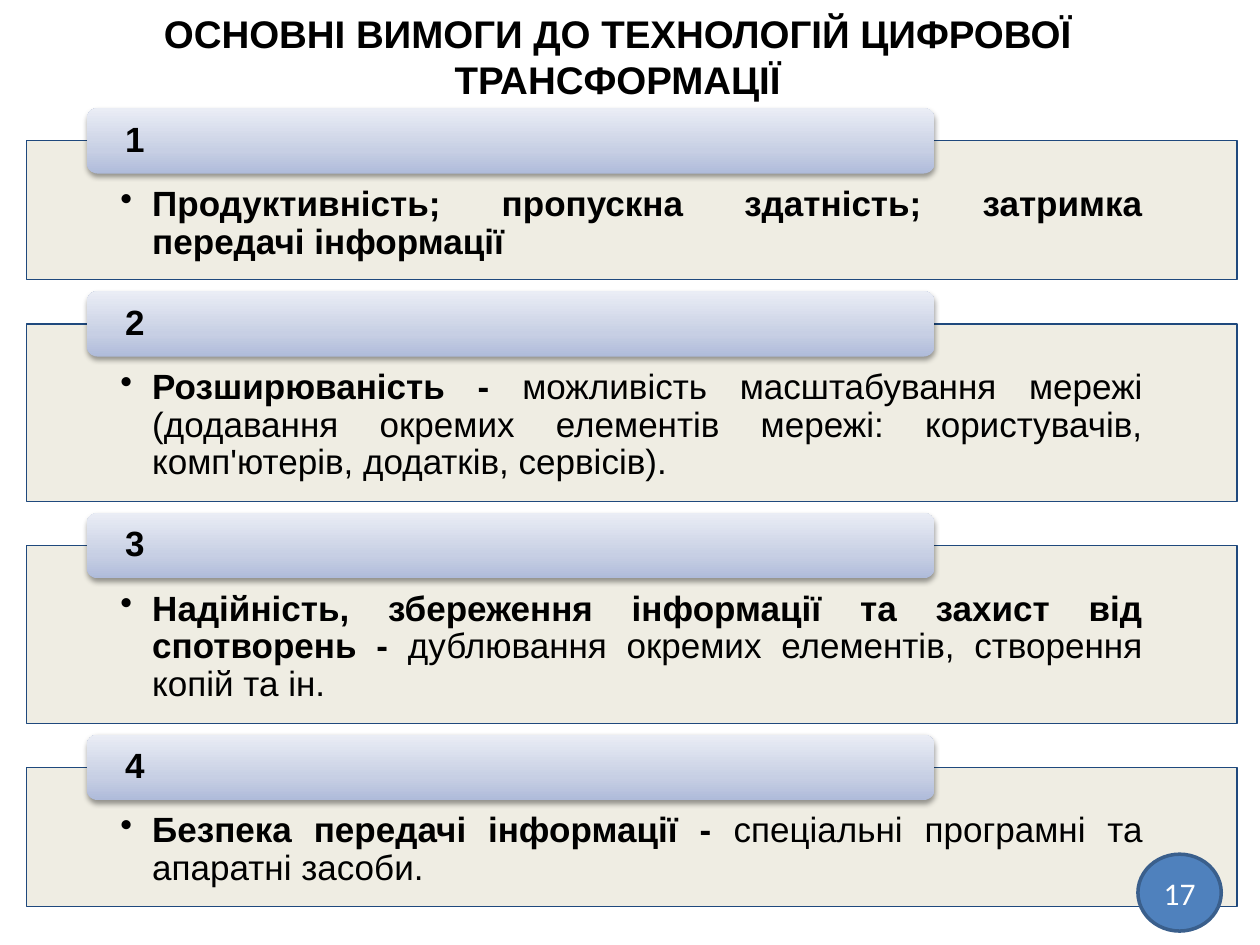
from copy import deepcopy

from lxml.etree import SubElement
from pptx import Presentation
from pptx.dml.color import RGBColor
from pptx.enum.shapes import MSO_SHAPE as Shape
from pptx.enum.text import MSO_ANCHOR as Anchor, PP_ALIGN as Align
from pptx.oxml.ns import qn
from pptx.util import Cm, Pt

COLORS = {
    "text": "000000", "panel": "EEECE1", "border": "1F497D",
    "tab_dark": "AFBBDA", "tab_mid": "C7CFE4", "tab_light": "EAEDF5",
    "badge": "4F81BD", "badge_edge": "3A5F8C", "badge_text": "FFFFFF",
}
TITLE = "ОСНОВНІ ВИМОГИ ДО ТЕХНОЛОГІЙ ЦИФРОВОЇ ТРАНСФОРМАЦІЇ"
REQUIREMENTS = [
    ("Продуктивність; пропускна здатність; затримка передачі інформації", "", 2.8),
    ("Розширюваність - ", "можливість масштабування мережі (додавання окремих "
     "елементів мережі: користувачів, комп'ютерів, додатків, сервісів).", 3.58),
    ("Надійність, збереження інформації та захист від спотворень -",
     " дублювання окремих елементів, створення копій та ін.", 3.58),
    ("Безпека передачі інформації - ", "спеціальні програмні та апаратні засоби.", 2.8),
]
FIRST_TOP, GAP, TAB_RISE = 2.84, 0.89, 0.66


def color(name):
    """Return the named colour."""
    return RGBColor.from_string(COLORS[name])


def add_shape(page, kind, left, top, width, height):
    """Add a preset shape without a shadow, measured in centimetres."""
    shape = page.shapes.add_shape(kind, Cm(left), Cm(top), Cm(width), Cm(height))
    shape.shadow.inherit = False
    return shape


def set_frame(frame, anchor, left, top, right, bottom):
    """Set wrapping, anchor and insets of a text frame."""
    frame.word_wrap = True
    frame.vertical_anchor = anchor
    frame.margin_left, frame.margin_top = Cm(left), Cm(top)
    frame.margin_right, frame.margin_bottom = Cm(right), Cm(bottom)


def style(para, size, align, name="Arial", ink="text", bold=None):
    """Set the font and alignment of a paragraph."""
    para.alignment = align
    para.font.size, para.font.name, para.font.bold = Pt(size), name, bold
    para.font.color.rgb = color(ink)


def add_bullet(para):
    """Give a paragraph a hanging bullet."""
    props = para._p.get_or_add_pPr()
    props.set("marL", str(Cm(0.64)))
    props.set("indent", str(Cm(-0.64)))
    bullet = props.makeelement(qn("a:buChar"), {"char": "•"})
    props.insert_element_before(bullet, "a:tabLst", "a:defRPr", "a:extLst")


def add_shadow(shape):
    """Put a soft shadow below a shape."""
    effects = shape._element.spPr.find(qn("a:effectLst"))
    shadow = SubElement(effects, qn("a:outerShdw"), blurRad=str(Pt(3.1)),
                        dist=str(Pt(1.6)), dir="5400000", rotWithShape="0")
    ink = SubElement(shadow, qn("a:srgbClr"), val=COLORS["text"])
    SubElement(ink, qn("a:alpha"), val="38000")


def fill_gradient(shape):
    """Fill a shape with three shades, darkest at the bottom."""
    shape.fill.gradient()
    shape.fill.gradient_angle = 90
    stops = shape._element.spPr.find(".//" + qn("a:gsLst"))
    stops.append(deepcopy(stops[0]))
    shades = [(0, "tab_dark"), (0.35, "tab_mid"), (1, "tab_light")]
    for stop, (position, name) in zip(shape.fill.gradient_stops, shades):
        stop.position = position
        stop.color.rgb = color(name)


def add_title(page):
    """Add the centred heading."""
    box = page.shapes.add_textbox(Cm(0), Cm(0.08), Cm(24.9), Cm(2.1))
    box.text_frame.word_wrap = True
    para = box.text_frame.paragraphs[0]
    para.text = TITLE
    style(para, 22, Align.CENTER, bold=True)


def add_panel(page, top, height, term, detail):
    """Add a bordered panel with its bulleted requirement."""
    panel = add_shape(page, Shape.RECTANGLE, 0.53, top, 24.41, height)
    panel.fill.solid()
    panel.fill.fore_color.rgb = color("panel")
    tint = panel._element.spPr.find(qn("a:solidFill"))[0]
    SubElement(tint, qn("a:alpha"), val="90000")
    panel.line.color.rgb = color("border")
    panel.line.width = Pt(0.75)
    set_frame(panel.text_frame, Anchor.TOP, 1.9, 0.91, 1.9, 0.41)
    para = panel.text_frame.paragraphs[0]
    style(para, 20, Align.JUSTIFY)
    para.level, para.line_spacing = 1, 0.9
    add_bullet(para)
    for text, bold in ((term, True), (detail, False)):
        if text:
            span = para.add_run()
            span.text, span.font.bold = text, bold


def add_tab(page, top, number):
    """Add the numbered tab that overlaps the top edge of a panel."""
    tab = add_shape(page, Shape.ROUNDED_RECTANGLE, 1.75, top, 17.09, 1.32)
    fill_gradient(tab)
    tab.line.fill.background()
    add_shadow(tab)
    set_frame(tab.text_frame, Anchor.MIDDLE, 0.71, 0, 0.71, 0)
    para = tab.text_frame.paragraphs[0]
    para.text, para.line_spacing = str(number), 0.9
    style(para, 20, Align.LEFT, bold=True)


def add_badge(page, number):
    """Add the round page number."""
    badge = add_shape(page, Shape.OVAL, 22.94, 17.22, 1.68, 1.55)
    badge.fill.solid()
    badge.fill.fore_color.rgb = color("badge")
    badge.line.color.rgb = color("badge_edge")
    badge.line.width = Pt(2)
    set_frame(badge.text_frame, Anchor.MIDDLE, 0, 0, 0, 0)
    para = badge.text_frame.paragraphs[0]
    para.text = str(number)
    style(para, 18, Align.CENTER, "Calibri", "badge_text")


def main():
    """Build the slide and save it."""
    deck = Presentation()
    deck.slide_width, deck.slide_height = Cm(25.4), Cm(19.05)
    page = deck.slides.add_slide(deck.slide_layouts[6])
    add_title(page)
    top = FIRST_TOP
    for number, (term, detail, height) in enumerate(REQUIREMENTS, 1):
        add_panel(page, top, height, term, detail)
        add_tab(page, top - TAB_RISE, number)
        top += height + GAP
    add_badge(page, 17)
    deck.save("out.pptx")


if __name__ == "__main__":
    main()
